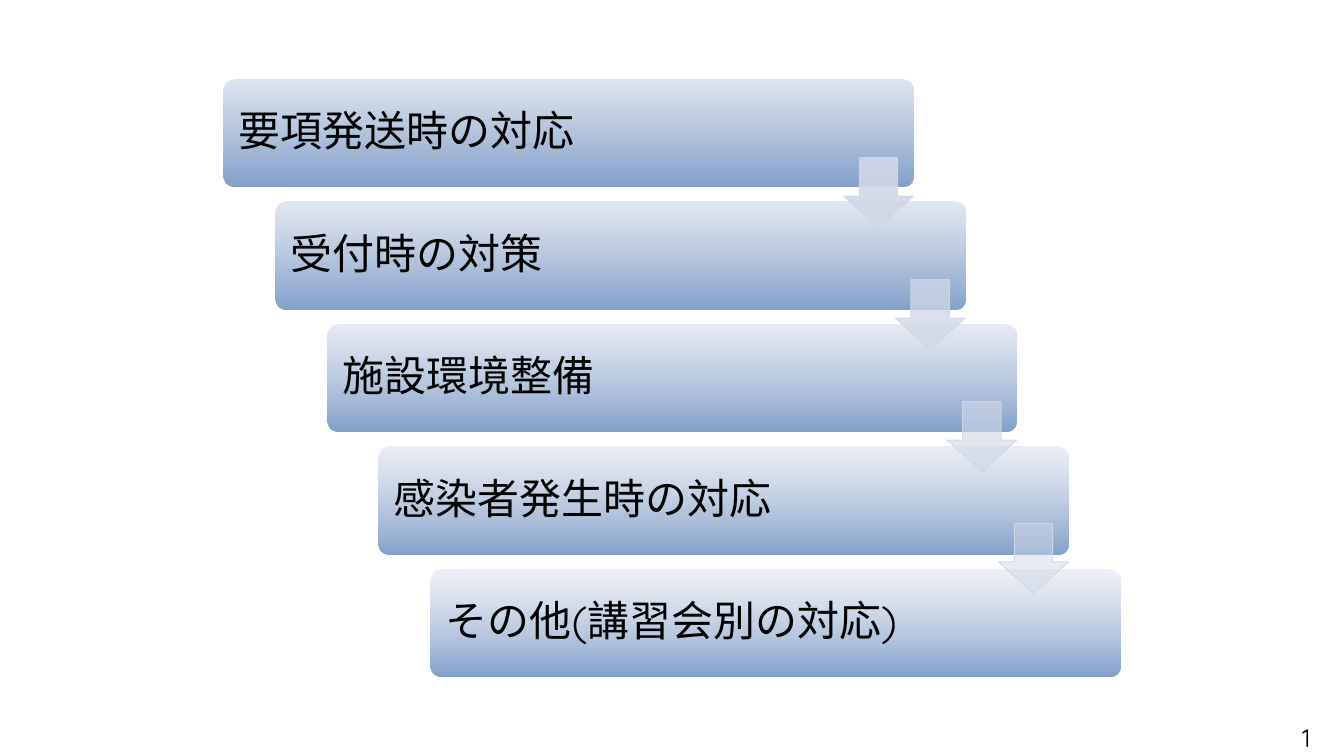
from dataclasses import dataclass

from lxml import etree
from pptx import Presentation
from pptx.dml.color import RGBColor
from pptx.enum.shapes import MSO_SHAPE
from pptx.enum.text import MSO_ANCHOR, PP_ALIGN
from pptx.oxml.ns import qn
from pptx.util import Pt

ROUNDED = MSO_SHAPE.ROUNDED_RECTANGLE
DOWN_ARROW = MSO_SHAPE.DOWN_ARROW
MIDDLE = MSO_ANCHOR.MIDDLE
LEFT = PP_ALIGN.LEFT


@dataclass(frozen=True)
class Theme:
    font: str = "Quicksand"
    text: RGBColor = RGBColor(0, 0, 0)
    bar_top: RGBColor = RGBColor(0xDB, 0xE2, 0xEE)
    bar_bottom: RGBColor = RGBColor(0x83, 0xA1, 0xCC)
    arrow: RGBColor = RGBColor(0xD0, 0xD8, 0xE8)
    step_size: float = 30
    number_size: float = 18


@dataclass(frozen=True)
class Step:
    label: str
    left: float
    top: float
    opacity: int


@dataclass(frozen=True)
class Arrow:
    left: float
    top: float
    opacity: int


THEME = Theme()
BAR_WIDTH, BAR_HEIGHT = 492.6, 77
BAR_LEFT, BAR_TOP = 159.9, 56.6
SHIFT_RIGHT, SHIFT_DOWN = 36.9, 87.5
ARROW_SIZE = 49.9
ARROW_TOP, ARROW_DOWN = 112.7, 87.1
INSET = 8.6

LABELS = [
    "要項発送時の対応",
    "受付時の対策",
    "施設環境整備",
    "感染者発生時の対応",
    "その他(講習会別の対応)",
]
STEPS = [
    Step(label, BAR_LEFT + SHIFT_RIGHT * i, BAR_TOP + SHIFT_DOWN * i, 90 - 10 * i)
    for i, label in enumerate(LABELS)
]
ARROWS = [
    Arrow(step.left + BAR_WIDTH - ARROW_SIZE, ARROW_TOP + ARROW_DOWN * i, round(90 - 40 * i / 3))
    for i, step in enumerate(STEPS[:-1])
]


def set_opacity(element, percent: int) -> None:
    color = next(element.iter(qn("a:srgbClr")))
    etree.SubElement(color, qn("a:alpha"), val=str(percent * 1000))


def style_paragraph(paragraph, size: float) -> None:
    paragraph.alignment = LEFT
    paragraph.font.name = THEME.font
    paragraph.font.size = Pt(size)
    paragraph.font.color.rgb = THEME.text


def draw_step(slide, step: Step) -> None:
    shape = slide.shapes.add_shape(
        ROUNDED, Pt(step.left), Pt(step.top), Pt(BAR_WIDTH), Pt(BAR_HEIGHT)
    )
    shape.shadow.inherit = False
    shape.adjustments[0] = 0.1
    shape.line.fill.background()
    shape.fill.gradient()
    shape.fill.gradient_angle = 270
    top_stop, bottom_stop = shape.fill.gradient_stops
    top_stop.color.rgb = THEME.bar_top
    bottom_stop.color.rgb = THEME.bar_bottom
    set_opacity(shape.element.spPr.find(qn("a:gradFill")), step.opacity)

    frame = shape.text_frame
    frame.word_wrap = True
    frame.vertical_anchor = MIDDLE
    frame.margin_left = frame.margin_right = Pt(INSET)
    frame.margin_top = frame.margin_bottom = Pt(INSET)
    paragraph = frame.paragraphs[0]
    paragraph.text = step.label
    paragraph.line_spacing = 0.9
    style_paragraph(paragraph, THEME.step_size)


def draw_arrow(slide, arrow: Arrow) -> None:
    shape = slide.shapes.add_shape(
        DOWN_ARROW, Pt(arrow.left), Pt(arrow.top), Pt(ARROW_SIZE), Pt(ARROW_SIZE)
    )
    shape.shadow.inherit = False
    shape.adjustments[0] = 0.55
    shape.adjustments[1] = 0.45
    shape.fill.solid()
    shape.fill.fore_color.rgb = THEME.arrow
    shape.line.color.rgb = THEME.arrow
    shape.line.width = Pt(0.75)
    properties = shape.element.spPr
    set_opacity(properties.find(qn("a:solidFill")), arrow.opacity)
    set_opacity(properties.find(qn("a:ln")), 90)


def draw_slide_number(slide) -> None:
    box = slide.shapes.add_textbox(Pt(923), Pt(512.6), Pt(36), Pt(27))
    frame = box.text_frame
    frame.word_wrap = True
    frame.margin_bottom = Pt(0)
    paragraph = frame.paragraphs[0]
    paragraph.text = "1"
    style_paragraph(paragraph, THEME.number_size)


def main() -> None:
    presentation = Presentation()
    presentation.slide_width = Pt(960)
    presentation.slide_height = Pt(540)
    slide = presentation.slides.add_slide(presentation.slide_layouts[6])
    draw_slide_number(slide)
    for step in STEPS:
        draw_step(slide, step)
    for arrow in ARROWS:
        draw_arrow(slide, arrow)
    presentation.save("out.pptx")


if __name__ == "__main__":
    main()
